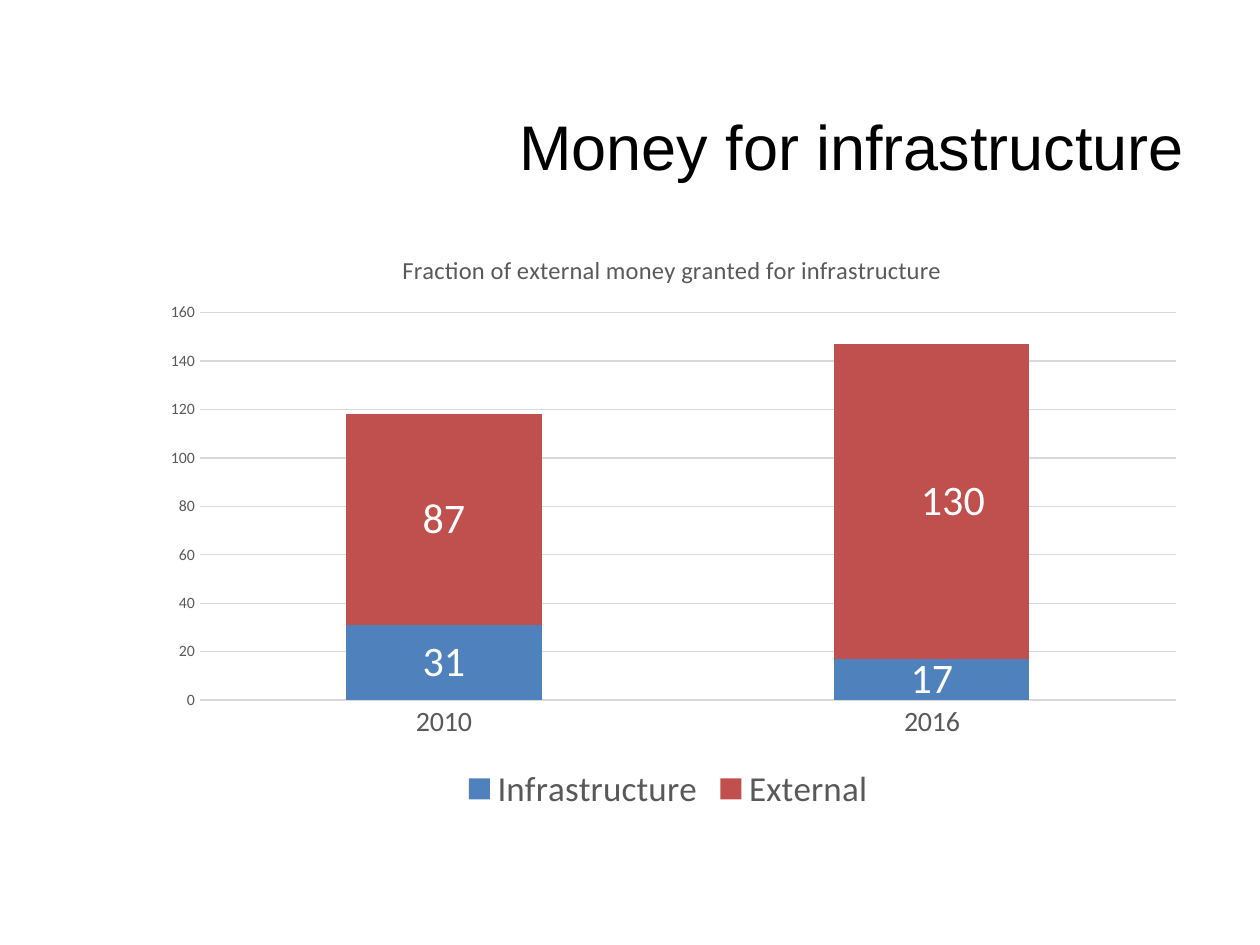
from lxml.etree import SubElement
from pptx import Presentation
from pptx.chart.data import CategoryChartData as ChartData
from pptx.dml.color import RGBColor
from pptx.enum.chart import XL_CHART_TYPE as Kind
from pptx.enum.chart import XL_LABEL_POSITION as LabelPos
from pptx.enum.chart import XL_LEGEND_POSITION as KeyPos
from pptx.enum.chart import XL_TICK_MARK as Tick
from pptx.enum.text import MSO_ANCHOR as Anchor
from pptx.enum.text import PP_ALIGN as Align
from pptx.oxml.ns import qn
from pptx.util import Inches, Pt

BLACK = RGBColor(0x00, 0x00, 0x00)
WHITE = RGBColor(0xFF, 0xFF, 0xFF)
GREY = RGBColor(0x59, 0x59, 0x59)
RULE = RGBColor(0xD9, 0xD9, 0xD9)
BLUE = RGBColor(0x4F, 0x81, 0xBD)
RED = RGBColor(0xC0, 0x50, 0x4D)

YEARS = ["2010", "2016"]
SERIES = [("Infrastructure", (31, 17), BLUE), ("External ", (87, 130), RED)]

TITLE_BOX = [Inches(n) for n in (2.24, 0.53, 7.26, 1.25)]
CHART_BOX = [Inches(n) for n in (1.17, 1.83, 8.33, 4.66)]


def style(font, size, color, name="Calibri"):
    font.size, font.name, font.bold = Pt(size), name, False
    font.color.rgb = color


def rule(line):
    line.color.rgb = RULE
    line.width = Pt(0.75)


def set_layout(parent, index, **parts):
    """Insert a manual chart layout, in shares of the chart's size."""
    for old in parent.findall(qn("c:layout")):
        parent.remove(old)
    layout = SubElement(parent, qn("c:layout"))
    manual = SubElement(layout, qn("c:manualLayout"))
    for tag, value in parts.items():
        SubElement(manual, qn("c:" + tag)).set("val", str(value))
    parent.insert(index, layout)


def add_title(slide, box):
    title = slide.shapes.title
    title.left, title.top, title.width, title.height = box
    frame = title.text_frame
    frame.text = "Money for infrastructure"
    frame.vertical_anchor = Anchor.MIDDLE
    para = frame.paragraphs[0]
    para.alignment = Align.RIGHT
    style(para.runs[0].font, 36, BLACK, "Arial")


def add_bars(slide, box):
    data = ChartData()
    data.categories = YEARS
    for name, values, _ in SERIES:
        data.add_series(name, values)
    chart = slide.shapes.add_chart(Kind.COLUMN_STACKED, *box, data).chart
    style(chart.font, 10, BLACK)

    # Heading and legend
    head = chart.chart_title.text_frame
    head.text = "Fraction of external money granted for infrastructure"
    style(head.paragraphs[0].runs[0].font, 14, GREY)
    chart.has_legend = True
    chart.legend.position = KeyPos.BOTTOM
    chart.legend.include_in_layout = False
    style(chart.legend.font, 20, GREY)

    # Axes
    for axis, size in ((chart.category_axis, 16), (chart.value_axis, 9)):
        axis.major_tick_mark = axis.minor_tick_mark = Tick.NONE
        style(axis.tick_labels.font, size, GREY)
    rule(chart.category_axis.format.line)
    axis = chart.value_axis
    axis.minimum_scale, axis.maximum_scale, axis.major_unit = 0, 160, 20
    axis.tick_labels.number_format = "0"
    axis.tick_labels.number_format_is_linked = False
    axis.format.line.fill.background()
    rule(axis.major_gridlines.format.line)

    # Columns and their values
    plot = chart.plots[0]
    plot.gap_width, plot.overlap, plot.vary_by_categories = 150, 100, False
    for series, (_, _, color) in zip(plot.series, SERIES):
        series.format.fill.solid()
        series.format.fill.fore_color.rgb = color
        labels = series.data_labels
        labels.show_value = True
        labels.position = LabelPos.CENTER
        style(labels.font, 24, WHITE)

    # The last label sits a little right of centre
    last = plot.series[1]
    label = last.points[1].data_label
    label.position = LabelPos.CENTER
    style(label.font, 24, WHITE)
    node = last.data_labels._element.find(qn("c:dLbl"))
    set_layout(node, 1, x=0.02, y=0)

    area = chart._chartSpace.chart.plotArea
    set_layout(area, 0, layoutTarget="inner", xMode="edge", yMode="edge",
               x=0.05, y=0.14, w=0.93, h=0.66)


def main():
    deck = Presentation()
    deck.slide_width, deck.slide_height = Inches(10), Inches(7.5)
    slide = deck.slides.add_slide(deck.slide_layouts[5])
    add_bars(slide, CHART_BOX)
    add_title(slide, TITLE_BOX)
    deck.save("out.pptx")


if __name__ == "__main__":
    main()
